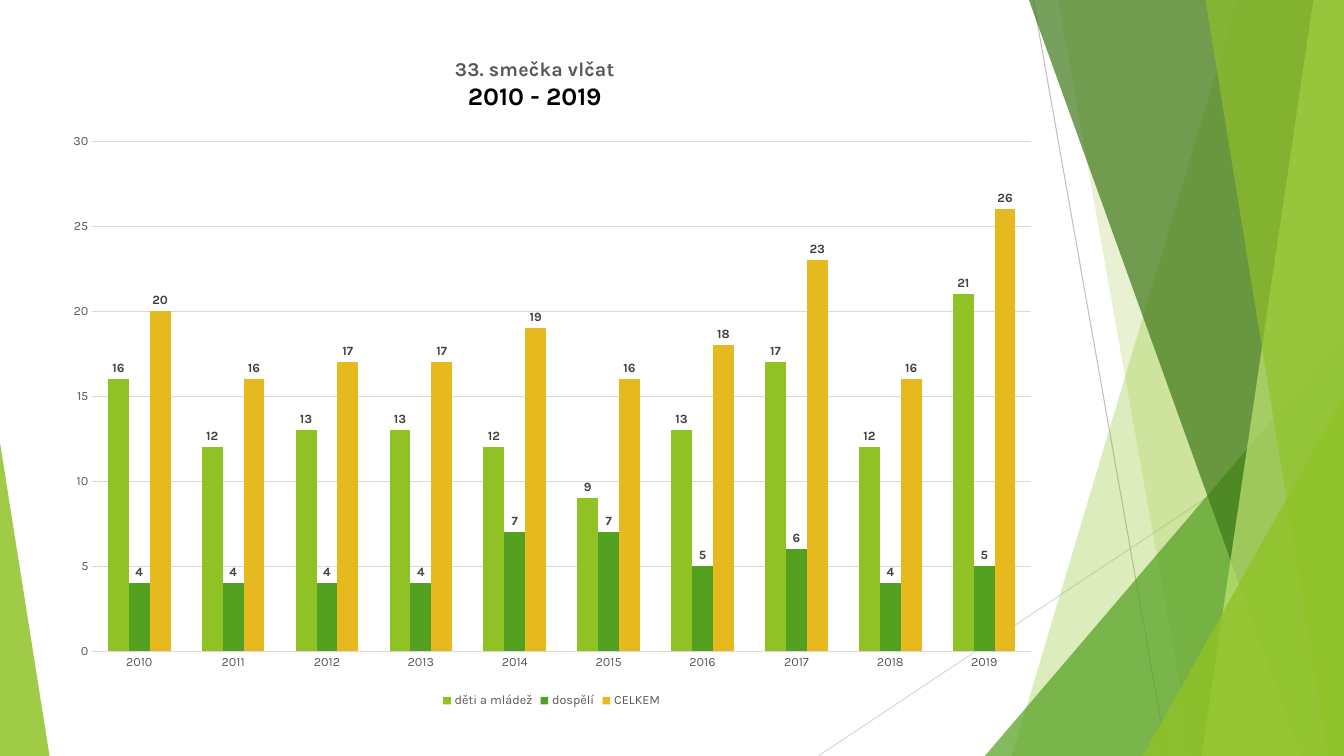
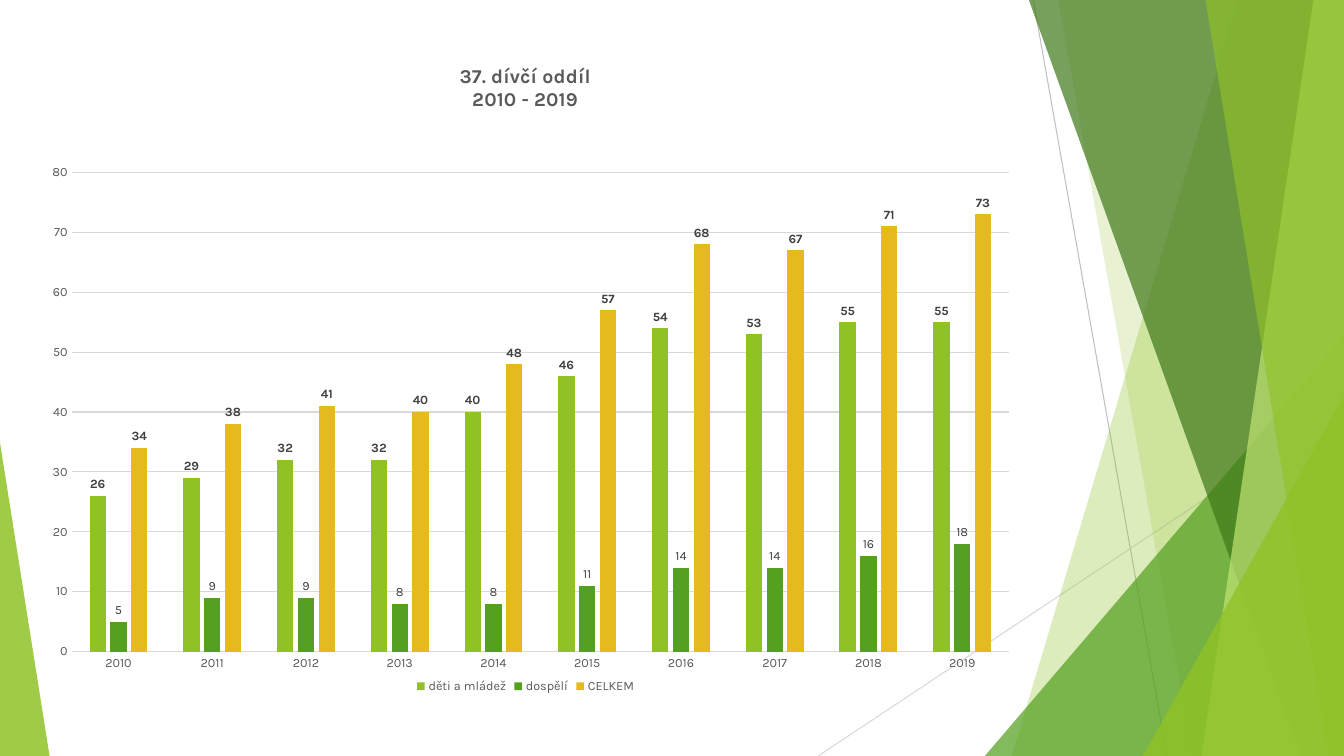
from lxml.etree import SubElement
from pptx import Presentation
from pptx.chart.data import CategoryChartData
from pptx.dml.color import RGBColor
from pptx.enum.chart import XL_CHART_TYPE, XL_LABEL_POSITION, XL_LEGEND_POSITION, XL_TICK_MARK
from pptx.enum.shapes import MSO_CONNECTOR, MSO_SHAPE
from pptx.oxml.ns import qn
from pptx.oxml.xmlchemy import OxmlElement
from pptx.util import Cm, Pt

WIDTH, HEIGHT = 33.87, 19.05
FONT = "Karla"
LIME, GREEN, GOLD = "90C226", "54A021", "E6B91E"
DARK_GREEN, PALE_LIME = "3F7819", "C0E474"
GREY, LABEL_GREY, GRID_GREY, BLACK = "595959", "404040", "D9D9D9", "000000"
YEARS = [str(year) for year in range(2010, 2020)]
GROUPS = ["děti a mládež", "dospělí", "CELKEM"]
GROUP_COLOURS = [LIME, GREEN, GOLD]


def rgb(code):
    return RGBColor.from_string(code)


def style_font(font, size, colour, bold=False):
    font.name = FONT
    font.size = Pt(size)
    font.bold = bold
    font.color.rgb = rgb(colour)


def tint(shape, colour, opacity):
    """Give a borderless fill with the opacity in percent."""
    shape.shadow.inherit = False
    shape.line.fill.background()
    shape.fill.solid()
    shape.fill.fore_color.rgb = rgb(colour)
    colour_node = shape._element.spPr.find(".//" + qn("a:srgbClr"))
    SubElement(colour_node, qn("a:alpha"), val=str(opacity * 1000))


def add_band(slide, top_x, bottom_x, colour, opacity):
    """Fill the area from a slanted edge to the right side of the slide."""
    outline = slide.shapes.build_freeform(Cm(top_x), 0)
    corners = [(WIDTH, 0), (WIDTH, HEIGHT), (bottom_x, HEIGHT)]
    outline.add_line_segments([(Cm(x), Cm(y)) for x, y in corners], close=True)
    tint(outline.convert_to_shape(), colour, opacity)


def add_corner(slide, left, top, width, apex, colour, opacity):
    """Stand a triangle on the bottom edge; apex 0 is left, 1 is right."""
    corner = slide.shapes.add_shape(
        MSO_SHAPE.ISOSCELES_TRIANGLE, Cm(left), Cm(top), Cm(width), Cm(HEIGHT - top))
    corner.adjustments[0] = apex
    tint(corner, colour, opacity)


def add_hairline(slide, start, end, colour):
    hairline = slide.shapes.add_connector(
        MSO_CONNECTOR.STRAIGHT, *(Cm(value) for value in start + end))
    hairline.line.color.rgb = rgb(colour)
    hairline.line.width = Pt(0.75)
    SubElement(hairline._element.spPr, qn("a:effectLst"))


def add_backdrop(slide):
    """Draw the green facets, then hand them to the layout shared by all slides."""
    layout = slide.slide_layout
    for placeholder in list(layout.placeholders):
        placeholder._element.getparent().remove(placeholder._element)
    add_hairline(slide, (26.04, 0), (29.41, HEIGHT), "BFBFBF")
    add_hairline(slide, (WIDTH, 10.24), (20.62, HEIGHT), GRID_GREY)
    add_band(slide, 31.19, 25.5, LIME, 30)
    add_band(slide, 26.67, 30.05, LIME, 20)
    add_corner(slide, 24.82, 8.46, 9.05, 1, GREEN, 72)
    add_band(slide, 25.93, 32.79, DARK_GREEN, 70)
    add_band(slide, 33.1, 30.28, PALE_LIME, 70)
    add_band(slide, 30.38, 33.48, LIME, 65)
    add_corner(slide, 28.8, 9.98, 5.07, 1, LIME, 80)
    add_corner(slide, 0, 11.15, 1.25, 0, LIME, 85)
    for facet in list(slide.shapes):
        layout.shapes._spTree.append(facet._element)


def set_layout(parent, index, **settings):
    """Write a manual chart layout as child number index of parent."""
    for old in parent.findall(qn("c:layout")):
        parent.remove(old)
    layout = OxmlElement("c:layout")
    parent.insert(index, layout)
    manual = SubElement(layout, qn("c:manualLayout"))
    for name, value in settings.items():
        SubElement(manual, qn("c:" + name), val=str(value))


def set_title(chart, lines, x, y):
    """Lines are tuples of text, size and colour."""
    title = chart.chart_title
    frame = title.text_frame
    for number, (text, size, colour) in enumerate(lines):
        paragraph = frame.add_paragraph() if number else frame.paragraphs[0]
        paragraph.text = text
        style_font(paragraph.font, size, colour, bold=True)
    set_layout(title._element, 1, xMode="edge", yMode="edge", x=x, y=y)


def style_axes(chart, top, step, baseline):
    for axis in (chart.category_axis, chart.value_axis):
        axis.major_tick_mark = axis.minor_tick_mark = XL_TICK_MARK.NONE
        style_font(axis.tick_labels.font, 9, GREY)
        axis.format.line.fill.background()
    if baseline:
        chart.category_axis.format.line.color.rgb = rgb(GRID_GREY)
        chart.category_axis.format.line.width = Pt(0.75)
    scale = chart.value_axis
    scale.minimum_scale, scale.maximum_scale, scale.major_unit = 0, top, step
    grid = scale.major_gridlines.format.line
    grid.color.rgb = rgb(GRID_GREY)
    grid.width = Pt(0.75)


def style_series(plot, bold_groups):
    plot.vary_by_categories = False
    for series, colour in zip(plot.series, GROUP_COLOURS):
        series.format.fill.solid()
        series.format.fill.fore_color.rgb = rgb(colour)
        labels = series.data_labels
        labels.show_value = True
        labels.position = XL_LABEL_POSITION.OUTSIDE_END
        style_font(labels.font, 9, LABEL_GREY, series.name in bold_groups)


def add_member_chart(slide, box, counts, plot_box, gap, overlap, bold_groups):
    """Add a column chart of members per year; plot_box is in chart fractions."""
    data = CategoryChartData()
    data.categories = YEARS
    for group, values in zip(GROUPS, counts):
        data.add_series(group, values)
    chart = slide.shapes.add_chart(
        XL_CHART_TYPE.COLUMN_CLUSTERED, *(Cm(value) for value in box), data).chart
    style_font(chart.font, 10, BLACK)
    chart.has_legend = True
    chart.legend.position = XL_LEGEND_POSITION.BOTTOM
    chart.legend.include_in_layout = False
    style_font(chart.legend.font, 9, GREY)
    plot = chart.plots[0]
    plot.gap_width, plot.overlap = gap, overlap
    style_series(plot, bold_groups)
    x, y, w, h = plot_box
    set_layout(chart._chartSpace.chart.plotArea, 0, layoutTarget="inner",
               xMode="edge", yMode="edge", x=x, y=y, w=w, h=h)
    return chart


def add_cubs(slide):
    counts = [
        [16, 12, 13, 13, 12, 9, 13, 17, 12, 21],
        [4, 4, 4, 4, 7, 7, 5, 6, 4, 5],
        [20, 16, 17, 17, 19, 16, 18, 23, 16, 26],
    ]
    chart = add_member_chart(slide, (1.32, 1.02, 25.17, 16.92), counts,
                             (0.04, 0.15, 0.94, 0.76), 150, 0, GROUPS)
    set_title(chart, [("33. smečka vlčat", 14, GREY), ("2010 - 2019", 18, BLACK)], 0.4, 0.02)
    style_axes(chart, 30, 5, baseline=False)


def add_girls(slide):
    counts = [
        [26, 29, 32, 32, 40, 46, 54, 53, 55, 55],
        [5, 9, 9, 8, 8, 11, 14, 14, 16, 18],
        [34, 38, 41, 40, 48, 57, 68, 67, 71, 73],
    ]
    chart = add_member_chart(slide, (0.81, 1.04, 24.87, 16.54), counts,
                             (0.04, 0.2, 0.95, 0.73), 219, -27, ["děti a mládež", "CELKEM"])
    set_title(chart, [("37. dívčí oddíl", 14, GREY), ("2010 - 2019", 14, GREY)], 0.43, 0.03)
    style_axes(chart, 80, 10, baseline=True)


def main():
    deck = Presentation()
    deck.slide_width, deck.slide_height = Cm(WIDTH), Cm(HEIGHT)
    blank = deck.slide_layouts[6]
    cubs, girls = (deck.slides.add_slide(blank) for _ in range(2))
    add_backdrop(cubs)
    add_cubs(cubs)
    add_girls(girls)
    deck.save("out.pptx")


if __name__ == "__main__":
    main()
